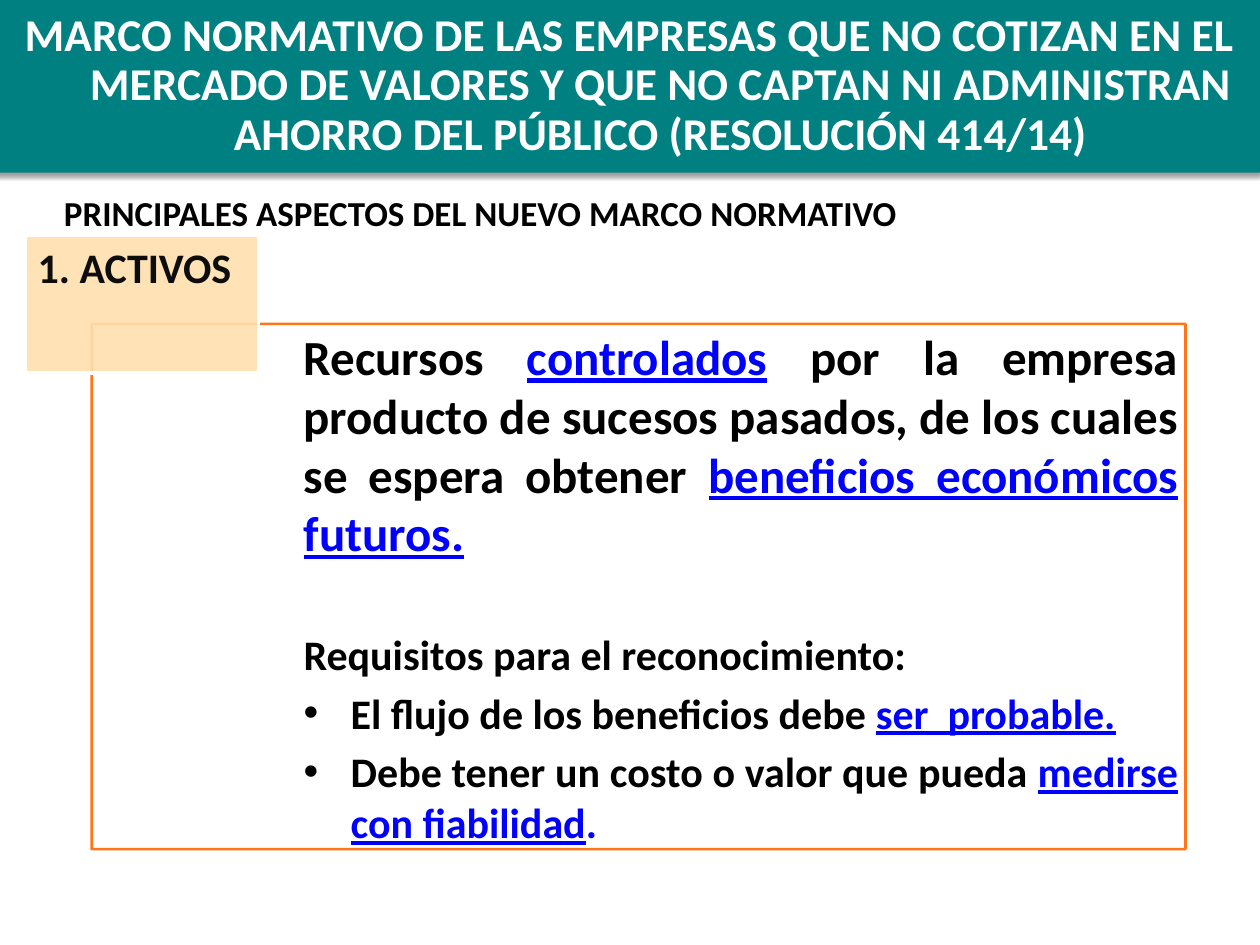
from lxml import etree
from pptx import Presentation
from pptx import util as u
from pptx.dml import color
from pptx.enum import shapes, text
from pptx.oxml import ns

FONT = "Calibri"
BLACK, BLUE, WHITE = "000000", "0000FF", "FFFFFF"
TEAL, ORANGE, PEACH, INK = "008080", "FF6600", "FFDFAF", "0D0D0D"

TITLE = ("MARCO NORMATIVO DE LAS EMPRESAS QUE NO COTIZAN EN EL MERCADO DE VALORES "
         "Y QUE NO CAPTAN NI ADMINISTRAN AHORRO DEL PÚBLICO (RESOLUCIÓN 414/14)")
SUBTITLE = "PRINCIPALES ASPECTOS DEL NUEVO MARCO NORMATIVO"
TAG = "1. ACTIVOS"

DEFINITION = [
    {"size": 28, "before": 0, "bullet": False, "spans": [
        ("Recursos ", False), ("controlados", True),
        (" por la empresa producto de sucesos pasados, de los cuales se espera obtener ", False),
        ("beneficios económicos futuros.", True)]},
    {"size": 24, "before": 38, "bullet": False, "spans": [
        ("Requisitos para el reconocimiento:", False)]},
    {"size": 24, "before": 4.8, "bullet": True, "spans": [
        ("El flujo de los beneficios debe ", False), ("ser  probable.", True)]},
    {"size": 24, "before": 4.8, "bullet": True, "spans": [
        ("Debe tener un costo o valor que pueda ", False),
        ("medirse con fiabilidad", True), (".", BLUE)]},
]

PLACES = {
    "header": (-0.1, -0.08, 25.5, 3.56),
    "title": (0.1, 0.13, 25.2, 3.25),
    "definition": (1.85, 6.53, 22.05, 10.59),
    "tag": (0.51, 4.75, 4.7, 2.77),
    "subtitle": (1.04, 3.73, 17.45, 1.12),
}


def rgb(value):
    return color.RGBColor.from_string(value)


def place(name):
    return [u.Cm(length) for length in PLACES[name]]


def child(parent, tag, **attributes):
    element = etree.SubElement(parent, ns.qn(tag))
    for key, value in attributes.items():
        element.set(key, str(value))
    return element


def set_alpha(paint, percent):
    solid = paint._xPr.find(ns.qn("a:solidFill"))
    child(solid[0], "a:alpha", val=percent * 1000)


def add_box(page, name, fill, fill_alpha=100, line=None, width=0, line_alpha=100):
    box = page.shapes.add_shape(shapes.MSO_SHAPE.RECTANGLE, *place(name))
    box.shadow.inherit = False
    box.fill.solid()
    box.fill.fore_color.rgb = rgb(fill)
    set_alpha(box.fill, fill_alpha)
    if line:
        box.line.color.rgb = rgb(line)
        box.line.width = u.Pt(width)
        set_alpha(box.line.fill, line_alpha)
    else:
        box.line.fill.background()
    box.text_frame.word_wrap = True
    return box


def add_span(para, words, size, ink, underline=False):
    span = para.add_run()
    span.text = words
    span.font.name = FONT
    span.font.size = u.Pt(size)
    span.font.bold = True
    span.font.underline = underline
    span.font.color.rgb = rgb(ink)


def hang(para, indent, bullet=None):
    properties = para._p.get_or_add_pPr()
    properties.set("marL", str(u.Cm(indent)))
    properties.set("indent", str(-u.Cm(indent)))
    if bullet:
        child(properties, "a:buFont", typeface="Arial")
        child(properties, "a:buChar", char=bullet)


def add_header(page):
    header = add_box(page, "header", TEAL)
    effects = header._element.spPr.find(ns.qn("a:effectLst"))
    shadow = child(effects, "a:outerShdw", blurRad=u.Pt(3.1), dist=u.Pt(1.6),
                   dir=90 * 60000, rotWithShape=0)
    child(child(shadow, "a:srgbClr", val=BLACK), "a:alpha", val=38000)

    frame = page.shapes.add_textbox(*place("title")).text_frame
    frame.word_wrap = True
    para = frame.paragraphs[0]
    hang(para, 1.25)
    para.alignment = text.PP_ALIGN.CENTER
    para.line_spacing = 0.9
    add_span(para, TITLE, 26, WHITE)


def add_definition(page):
    box = add_box(page, "definition", WHITE, 40, ORANGE, 1.5, 90)
    frame = box.text_frame
    frame.vertical_anchor = text.MSO_ANCHOR.MIDDLE
    frame.margin_left = u.Cm(4.27)
    frame.margin_top = frame.margin_right = frame.margin_bottom = u.Cm(0.15)
    for index, item in enumerate(DEFINITION):
        para = frame.add_paragraph() if index else frame.paragraphs[0]
        if item["bullet"]:
            hang(para, 0.95, "•")
        para.alignment = text.PP_ALIGN.JUSTIFY
        para.space_before = u.Pt(item["before"])
        for words, key in item["spans"]:
            add_span(para, words, item["size"], BLUE if key else BLACK, key is True)


def add_tag(page):
    frame = add_box(page, "tag", PEACH, 90, WHITE, 2).text_frame
    frame.vertical_anchor = text.MSO_ANCHOR.TOP
    para = frame.paragraphs[0]
    para.alignment = text.PP_ALIGN.LEFT
    add_span(para, TAG, 24, INK)


def add_subtitle(page):
    frame = page.shapes.add_textbox(*place("subtitle")).text_frame
    frame.word_wrap = False
    para = frame.paragraphs[0]
    para.alignment = text.PP_ALIGN.JUSTIFY
    add_span(para, SUBTITLE, 20, BLACK)


def main():
    deck = Presentation()
    deck.slide_width, deck.slide_height = u.Cm(25.4), u.Cm(19.05)
    page = deck.slides.add_slide(deck.slide_layouts[6])
    add_header(page)
    add_definition(page)
    add_tag(page)
    add_subtitle(page)
    deck.save("out.pptx")


if __name__ == "__main__":
    main()
